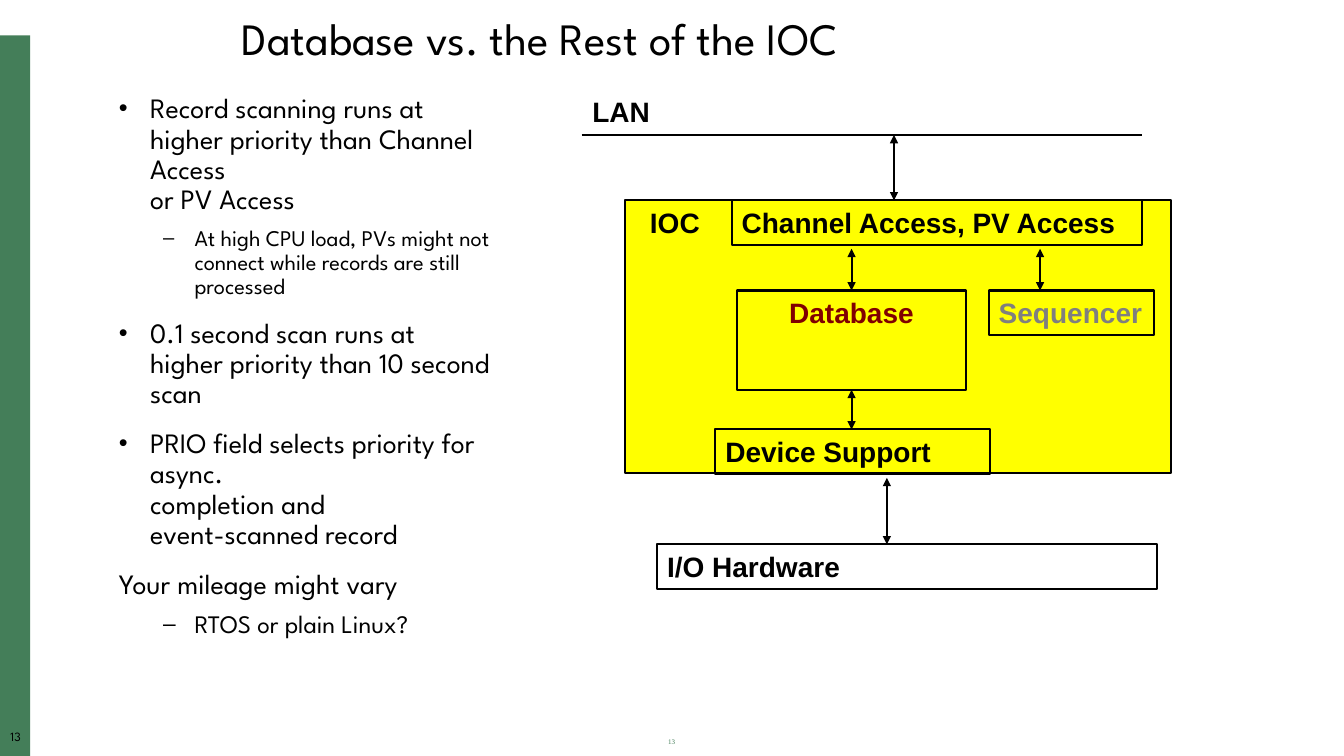
import pptx
import pptx.dml.color
import pptx.enum.shapes
import pptx.enum.text
import pptx.oxml
import pptx.oxml.ns
import pptx.util
from lxml import etree

Cm = pptx.util.Cm
Pt = pptx.util.Pt
ALIGN = pptx.enum.text.PP_ALIGN
RECTANGLE = pptx.enum.shapes.MSO_SHAPE.RECTANGLE
COLORS = {
    "ink": "000000",
    "green": "447E59",
    "ioc": "FFFF00",
    "database": "800000",
    "sequencer": "7F7F7F",
}
HEADING_FONT = "League Spartan"
LABEL_FONT = "Arial"
LABEL_HEIGHT = 1.12
LAN_Y, IOC_TOP, RECORD_TOP, DEVICE_TOP, HARDWARE_TOP = 3.4, 5.05, 7.32, 10.82, 13.72
POINTS = [
    (0, "•", 20, "Record scanning runs at higher priority than Channel Access\nor PV Access"),
    (1, "–", 16, "At high CPU load, PVs might not connect while records are still processed"),
    (0, "•", 20, "0.1 second scan runs at higher priority than 10 second scan"),
    (0, "•", 20, "PRIO field selects priority for async.\ncompletion and\nevent-scanned record"),
    (0, None, 20, "Your mileage might vary"),
    (1, "–", 18, "RTOS or plain Linux?"),
]


def rgb(name):
    return pptx.dml.color.RGBColor.from_string(COLORS[name])


def add_run(paragraph, text, size, font, color="ink", bold=False):
    run = paragraph.add_run()
    run.text = text
    run.font.size = Pt(size)
    run.font.name = font
    run.font.bold = bold
    run.font.color.rgb = rgb(color)


def place(shape, left, top, width, height):
    shape.left, shape.top = Cm(left), Cm(top)
    shape.width, shape.height = Cm(width), Cm(height)


def add_panel(slide, left, top, width, height, fill=None, outlined=True):
    panel = slide.shapes.add_shape(RECTANGLE, Cm(left), Cm(top), Cm(width), Cm(height))
    panel.shadow.inherit = False
    if fill:
        panel.fill.solid()
        panel.fill.fore_color.rgb = rgb(fill)
    else:
        panel.fill.background()
    if outlined:
        panel.line.color.rgb = rgb("ink")
        panel.line.width = Pt(1.5)
    else:
        panel.line.fill.background()
    return panel


def write_label(shape, text, color="ink", align=ALIGN.LEFT):
    frame = shape.text_frame
    frame.word_wrap = True
    frame.vertical_anchor = pptx.enum.text.MSO_ANCHOR.TOP
    if align == ALIGN.LEFT:
        frame.margin_right = 0
    paragraph = frame.paragraphs[0]
    paragraph.alignment = align
    add_run(paragraph, text, 20, LABEL_FONT, color, bold=True)


def add_component(slide, text, left, top, width, height=LABEL_HEIGHT, color="ink", align=ALIGN.LEFT):
    component = add_panel(slide, left, top, width, height)
    write_label(component, text, color, align)
    return component


def add_caption(slide, text, left, top, width):
    caption = slide.shapes.add_textbox(Cm(left), Cm(top), Cm(width), Cm(LABEL_HEIGHT))
    write_label(caption, text)


def add_line(slide, x1, y1, x2, y2):
    line = slide.shapes.add_connector(
        pptx.enum.shapes.MSO_CONNECTOR.STRAIGHT, Cm(x1), Cm(y1), Cm(x2), Cm(y2)
    )
    line.line.color.rgb = rgb("ink")
    line.line.width = Pt(1.5)
    etree.SubElement(line._element.spPr, pptx.oxml.ns.qn("a:effectLst"))
    return line


def add_exchange(slide, x, top, bottom):
    arrow = add_line(slide, x, top, x, bottom)
    for end in ("a:headEnd", "a:tailEnd"):
        etree.SubElement(arrow.line._get_or_add_ln(), pptx.oxml.ns.qn(end), type="triangle")
    return arrow


def add_page_number(slide, left, top, width, height, size, font, color, inset):
    number = slide.shapes.add_textbox(Cm(left), Cm(top), Cm(width), Cm(height))
    frame = number.text_frame
    frame.word_wrap = True
    frame.margin_left = frame.margin_right = frame.margin_top = frame.margin_bottom = Cm(inset)
    paragraph = frame.paragraphs[0]
    paragraph.alignment = ALIGN.CENTER
    paragraph.line_spacing = 0.9
    add_run(paragraph, "13", size, font, color)


def set_bullet(paragraph, level, mark):
    properties = paragraph._p.get_or_add_pPr()
    indent = Cm(0.79) if mark else 0
    properties.set("marL", str(Cm((0.79, 1.91)[level]) if mark else 0))
    properties.set("indent", str(-indent))
    if not mark:
        etree.SubElement(properties, pptx.oxml.ns.qn("a:buNone"))
        return
    color = etree.SubElement(properties, pptx.oxml.ns.qn("a:buClr"))
    etree.SubElement(color, pptx.oxml.ns.qn("a:srgbClr"), val=COLORS["ink"])
    etree.SubElement(properties, pptx.oxml.ns.qn("a:buSzPct"), val="90000")
    etree.SubElement(properties, pptx.oxml.ns.qn("a:buFont"), typeface=LABEL_FONT)
    etree.SubElement(properties, pptx.oxml.ns.qn("a:buChar"), char=mark)


def write_title(slide):
    title = slide.shapes.title
    place(title, 5.84, 0.28, 24.38, 1.5)
    title.text_frame.auto_size = pptx.enum.text.MSO_AUTO_SIZE.NONE
    paragraph = title.text_frame.paragraphs[0]
    paragraph.alignment = ALIGN.LEFT
    paragraph.line_spacing = 0.9
    add_run(paragraph, "Database vs. the Rest of the IOC", 32, HEADING_FONT)


def write_points(slide):
    body = slide.placeholders[1]
    place(body, 2.74, 2.26, 9.91, 16.79)
    frame = body.text_frame
    frame.auto_size = pptx.enum.text.MSO_AUTO_SIZE.NONE
    for index, (level, mark, size, text) in enumerate(POINTS):
        paragraph = frame.add_paragraph() if index else frame.paragraphs[0]
        paragraph.level = level
        set_bullet(paragraph, level, mark)
        paragraph.line_spacing = 0.9
        paragraph.space_before = Pt((14, 8)[level] if index else 0)
        for row, part in enumerate(text.split("\n")):
            if row:
                paragraph.add_line_break()
            add_run(paragraph, part, size, HEADING_FONT)


def draw_architecture(slide):
    add_line(slide, 14.66, LAN_Y, 28.78, LAN_Y)
    add_caption(slide, "LAN", 14.68, 2.26, 1.98)
    add_panel(slide, 15.75, IOC_TOP, 13.77, 6.88, "ioc")
    add_caption(slide, "IOC", 16.13, IOC_TOP, 2.16)
    add_component(slide, "Channel Access, PV Access", 18.44, IOC_TOP, 10.34)
    database = add_component(
        slide, "Database", 18.57, RECORD_TOP, 5.78, 2.5, "database", ALIGN.CENTER
    )
    add_component(slide, "Sequencer", 24.92, RECORD_TOP, 4.17, color="sequencer")
    add_component(slide, "Device Support", 18.03, DEVICE_TOP, 6.93)
    add_component(slide, "I/O Hardware", 16.56, HARDWARE_TOP, 12.6)

    add_exchange(slide, 22.53, LAN_Y, IOC_TOP)
    add_exchange(slide, 26.21, 6.27, RECORD_TOP)
    add_exchange(slide, 22.35, 12.04, HARDWARE_TOP)
    add_exchange(slide, 21.46, 6.27, RECORD_TOP).end_connect(database, 0)
    add_exchange(slide, 21.46, RECORD_TOP + 2.5, DEVICE_TOP).begin_connect(database, 2)


def main():
    deck = pptx.Presentation()
    deck.slide_width, deck.slide_height = Cm(33.87), Cm(19.05)
    slide = deck.slides.add_slide(deck.slide_layouts[1])
    add_panel(slide, 0, 0.89, 0.76, 18.16, "green", outlined=False)
    add_page_number(slide, 0, 18.4, 0.79, 0.43, 9, HEADING_FONT, "ink", 0)
    add_page_number(slide, 12.9, 18.52, 8.05, 0.51, 5, "Times New Roman", "green", 0.13)
    write_title(slide)
    draw_architecture(slide)
    write_points(slide)
    deck.save("out.pptx")


if __name__ == "__main__":
    main()
